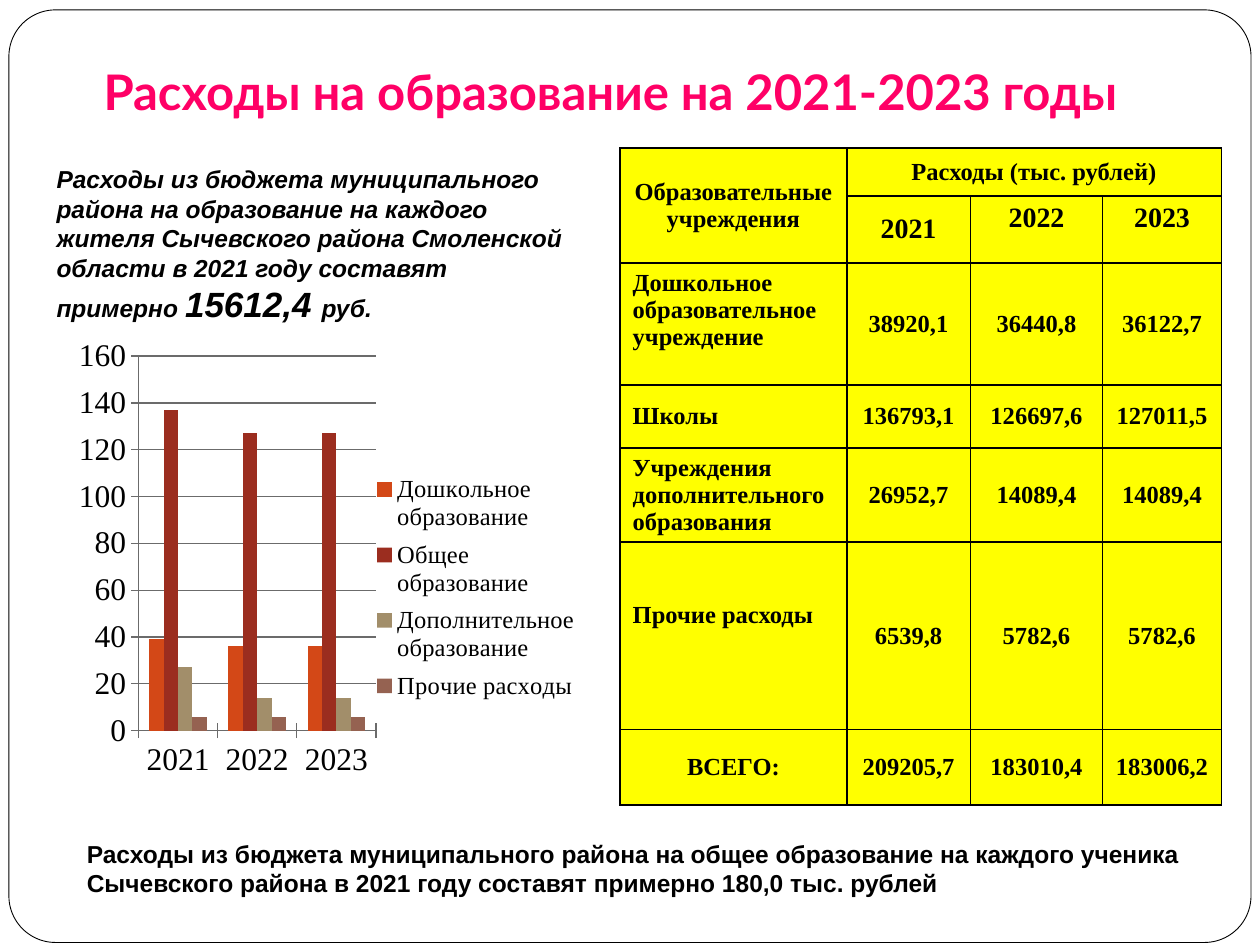
from dataclasses import dataclass

import pptx
import pptx.chart.data
import pptx.dml.color
import pptx.enum.chart
import pptx.enum.shapes
import pptx.enum.text
import pptx.oxml
import pptx.oxml.ns
import pptx.util
from pptx.util import Cm, Pt

ALIGN = pptx.enum.text.PP_ALIGN
ANCHOR = pptx.enum.text.MSO_ANCHOR
SERIF = "Times New Roman"
COLORS = {
    "white": "FFFFFF", "black": "000000", "title": "FF0066", "cell": "FFFF00", "axis": "6B6B6B",
    "preschool": "D34817", "school": "9B2D1F", "extra": "A28E6A", "other": "956251",
}


@dataclass
class Run:
    text: str
    size: float = 14
    italic: bool = False
    font: str = "Arial"
    color: str = "black"


@dataclass
class TextBlock:
    left: float
    top: float
    width: float
    height: float
    runs: list[Run]
    align: ALIGN = ALIGN.LEFT
    anchor: ANCHOR = ANCHOR.MIDDLE


@dataclass
class Series:
    name: str
    values: tuple[float, ...]
    color: str


@dataclass
class Label:
    """A row heading of the table."""
    text: str
    align: ALIGN = ALIGN.JUSTIFY
    anchor: ANCHOR = ANCHOR.MIDDLE
    top_margin: float = 0.13


TEXTS = [
    TextBlock(0, 0.71, 24.61, 1.96,
              [Run("Расходы на образование на 2021-2023 годы", 28, font="Lato", color="title")],
              ALIGN.CENTER, ANCHOR.BOTTOM),
    TextBlock(0.89, 3.12, 10.8, 3.61, [
        Run("Расходы из бюджета муниципального района на образование на каждого жителя "
            "Сычевского района Смоленской области в 2021 году составят примерно ", italic=True),
        Run("15612,4 ", 20, italic=True),
        Run("руб.", italic=True)]),
    TextBlock(1.5, 16.92, 22.86, 1.17, [
        Run("Расходы из бюджета муниципального района на общее образование на каждого ученика "
            "Сычевского района в 2021 году составят примерно 180,0 тыс. рублей")]),
]

YEARS = ("2021", "2022", "2023")
SERIES = [
    Series("Дошкольное образование", (39, 36, 36), "preschool"),
    Series("Общее образование", (137, 127, 127), "school"),
    Series("Дополнительное образование", (27, 14, 14), "extra"),
    Series("Прочие расходы", (6, 6, 6), "other"),
]

COL_WIDTHS = (4.57, 2.49, 2.67, 2.39)
ROW_HEIGHTS = (0.97, 1.35, 2.46, 1.27, 1.9, 3.78, 1.52)
EXPENSES = [
    (Label("Дошкольное образовательное учреждение", anchor=ANCHOR.TOP),
     ("38920,1", "36440,8", "36122,7")),
    (Label("Школы"), ("136793,1", "126697,6", "127011,5")),
    (Label("Учреждения\nдополнительного\nобразования"), ("26952,7", "14089,4", "14089,4")),
    (Label("Прочие расходы", ALIGN.LEFT, ANCHOR.TOP, 1.2), ("6539,8", "5782,6", "5782,6")),
    (Label("ВСЕГО:", ALIGN.CENTER), ("209205,7", "183010,4", "183006,2")),
]


def rgb(name: str) -> pptx.dml.color.RGBColor:
    return pptx.dml.color.RGBColor.from_string(COLORS[name])


def style_font(font, name: str, size: float, color: str = "black", bold: bool = True) -> None:
    font.name, font.size, font.bold = name, Pt(size), bold
    font.color.rgb = rgb(color)


def add_frame(s) -> None:
    sp = s.shapes.add_shape(pptx.enum.shapes.MSO_SHAPE.ROUNDED_RECTANGLE,
                            Cm(0.18), Cm(0.2), Cm(25.04), Cm(18.8))
    sp.adjustments[0] = 0.05
    sp.shadow.inherit = False
    sp.fill.solid()
    sp.fill.fore_color.rgb = rgb("white")
    sp.line.color.rgb = rgb("black")
    sp.line.width = Pt(0.5)


def add_text(s, block: TextBlock) -> None:
    sp = s.shapes.add_textbox(Cm(block.left), Cm(block.top), Cm(block.width), Cm(block.height))
    tf = sp.text_frame
    tf.word_wrap = True
    tf.vertical_anchor = block.anchor
    if block.anchor == ANCHOR.BOTTOM:
        tf.margin_bottom = Cm(0.25)
    p = tf.paragraphs[0]
    p.alignment = block.align
    for run in block.runs:
        r = p.add_run()
        r.text = run.text
        style_font(r.font, run.font, run.size, run.color)
        r.font.italic = run.italic


def style_cell(cell) -> None:
    """Fill the cell and draw a thin border on all four sides."""
    cell.fill.solid()
    cell.fill.fore_color.rgb = rgb("cell")
    tc_pr = cell._tc.get_or_add_tcPr()
    for i, side in enumerate(("lnL", "lnR", "lnT", "lnB")):
        tc_pr.insert(i, pptx.oxml.parse_xml(
            f'<a:{side} {pptx.oxml.ns.nsdecls("a")} w="12700"><a:solidFill>'
            f'<a:srgbClr val="{COLORS["black"]}"/></a:solidFill></a:{side}>'))


def write_cell(cell, label: Label, size: float = 14) -> None:
    cell.text_frame.text = label.text
    cell.vertical_anchor = label.anchor
    cell.margin_top = Cm(label.top_margin)
    for p in cell.text_frame.paragraphs:
        p.alignment = label.align
        for r in p.runs:
            style_font(r.font, SERIF, size)


def add_expense_table(s) -> None:
    table = s.shapes.add_table(len(ROW_HEIGHTS), len(COL_WIDTHS), Cm(12.5), Cm(2.98),
                               Cm(sum(COL_WIDTHS)), Cm(sum(ROW_HEIGHTS))).table
    for col, width in zip(table.columns, COL_WIDTHS):
        col.width = Cm(width)
    for row, height in zip(table.rows, ROW_HEIGHTS):
        row.height = Cm(height)
    for cell in table.iter_cells():
        style_cell(cell)
    table.cell(0, 0).merge(table.cell(1, 0))
    table.cell(0, 1).merge(table.cell(0, 3))
    write_cell(table.cell(0, 0), Label("Образовательные учреждения", ALIGN.CENTER))
    write_cell(table.cell(0, 1), Label("Расходы (тыс. рублей)", ALIGN.CENTER))
    for c, year in enumerate(YEARS, 1):
        anchor = ANCHOR.MIDDLE if c == 1 else ANCHOR.TOP
        write_cell(table.cell(1, c), Label(year, ALIGN.CENTER, anchor), 16)
    for r, (label, amounts) in enumerate(EXPENSES, 2):
        write_cell(table.cell(r, 0), label)
        for c, amount in enumerate(amounts, 1):
            write_cell(table.cell(r, c), Label(amount, ALIGN.CENTER))


def set_layout(element, x: float, y: float, w: float, h: float, inner: bool = False) -> None:
    """Place a plot area or legend by fractions of the chart's size."""
    for old in element.findall(pptx.oxml.ns.qn("c:layout")):
        element.remove(old)
    target = '<c:layoutTarget val="inner"/>' if inner else ""
    layout = pptx.oxml.parse_xml(
        f'<c:layout {pptx.oxml.ns.nsdecls("c")}><c:manualLayout>{target}'
        f'<c:xMode val="edge"/><c:yMode val="edge"/><c:x val="{x}"/><c:y val="{y}"/>'
        f'<c:w val="{w}"/><c:h val="{h}"/></c:manualLayout></c:layout>')
    element.insert(0 if inner else 1, layout)


def add_expense_chart(s) -> None:
    data = pptx.chart.data.CategoryChartData()
    data.categories = YEARS
    for series in SERIES:
        data.add_series(series.name, series.values)
    chart = s.shapes.add_chart(pptx.enum.chart.XL_CHART_TYPE.COLUMN_CLUSTERED,
                               Cm(0.79), Cm(6.55), Cm(11.13), Cm(10.49), data).chart
    chart.has_title = False
    style_font(chart.font, SERIF, 18, bold=False)
    plot = chart.plots[0]
    plot.vary_by_categories = False
    plot.gap_width, plot.overlap = 150, 0
    for drawn, series in zip(plot.series, SERIES):
        drawn.format.fill.solid()
        drawn.format.fill.fore_color.rgb = rgb(series.color)
    for axis in (chart.category_axis, chart.value_axis):
        axis.major_tick_mark = pptx.enum.chart.XL_TICK_MARK.CROSS
        axis.format.line.color.rgb = rgb("axis")
    value_axis = chart.value_axis
    value_axis.minimum_scale, value_axis.maximum_scale, value_axis.major_unit = 0, 160, 20
    value_axis.major_gridlines.format.line.color.rgb = rgb("axis")
    chart.has_legend = True
    chart.legend.position = pptx.enum.chart.XL_LEGEND_POSITION.RIGHT
    chart.legend.include_in_layout = False
    style_font(chart.legend.font, SERIF, 14, bold=False)
    set_layout(chart._chartSpace.chart.plotArea, 0.18, 0.06, 0.43, 0.72, inner=True)
    set_layout(chart.legend._element, 0.63, 0.27, 0.36, 0.47)


def main() -> None:
    prs = pptx.Presentation()
    prs.slide_width, prs.slide_height = Cm(25.4), Cm(19.05)
    s = prs.slides.add_slide(prs.slide_layouts[6])
    add_frame(s)
    add_expense_table(s)
    for block in TEXTS:
        add_text(s, block)
    add_expense_chart(s)
    prs.save("out.pptx")


if __name__ == "__main__":
    main()
